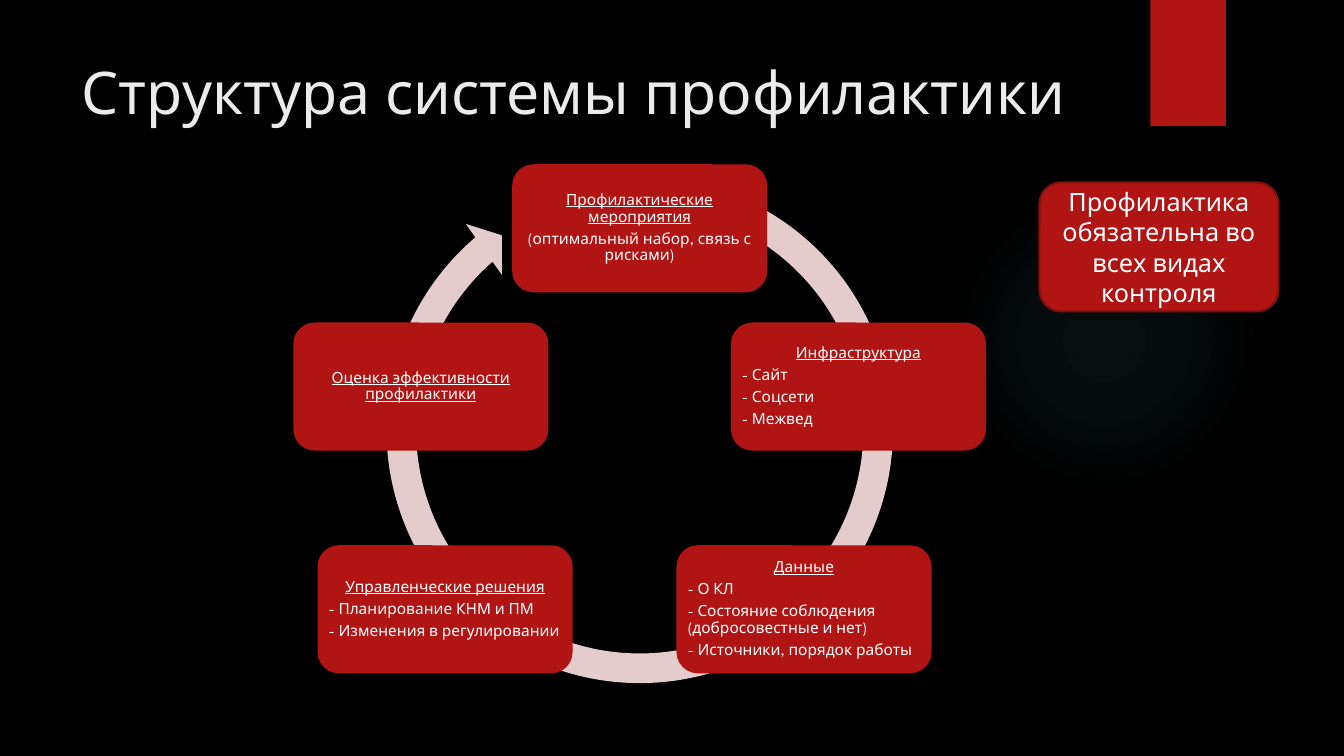
from lxml import etree
from pptx import Presentation
from pptx.dml.color import RGBColor
from pptx.enum.shapes import MSO_SHAPE as SHAPE
from pptx.enum.text import MSO_ANCHOR as ANCHOR, MSO_AUTO_SIZE as AUTOSIZE, PP_ALIGN as ALIGN
from pptx.oxml import parse_xml
from pptx.util import Inches, Pt

FONT = "League Spartan"
RED, DARK_RED, PINK = "B01513", "82100E", "E4CCCC"
BLACK, WHITE, TITLE_COLOR, GLOW = "000000", "FFFFFF", "EBEBEB", "50B9C1"
GLOW_STOPS = [(0, 7), (36, 6), (69, 0)]  # position %, opacity %

TITLE = "Структура системы профилактики"
NOTE = "Профилактика обязательна во всех видах контроля"

BOX_W, BOX_H = 2.53, 1.27
# left, top, heading, centred detail, list items
STAGES = [
    (5.08, 1.63, "Профилактические мероприятия",
     "(оптимальный набор, связь с рисками)", []),
    (7.25, 3.2, "Инфраструктура", None, ["Сайт", "Соцсети", "Межвед"]),
    (6.71, 5.41, "Данные", None,
     ["О КЛ", "Состояние соблюдения (добросовестные и нет)",
      "Источники, порядок работы"]),
    (3.15, 5.41, "Управленческие решения", None,
     ["Планирование КНМ и ПМ", "Изменения в регулировании"]),
    (2.91, 3.2, "Оценка эффективности профилактики", None, []),
]
ARROW_ADJUSTMENTS = [0.055, 3.307, 137.518, 174.007, 0.058]
A_NS = "http://schemas.openxmlformats.org/drawingml/2006/main"


def rgb(value):
    return RGBColor.from_string(value)


def add_block(slide, kind, left, top, width, height, fill=RED, line=None):
    sp = slide.shapes.add_shape(
        kind, Inches(left), Inches(top), Inches(width), Inches(height))
    sp.shadow.inherit = False
    sp.fill.solid()
    sp.fill.fore_color.rgb = rgb(fill)
    if line:
        sp.line.color.rgb = rgb(line)
        sp.line.width = Pt(1.5)
    else:
        sp.line.fill.background()
    return sp


def write(tf, text, size=11, color=WHITE, align=ALIGN.CENTER,
          underline=False, spacing=None, after=None):
    """Fill the empty first paragraph, or append a new one."""
    p = tf.paragraphs[0] if not tf.text else tf.add_paragraph()
    p.alignment = align
    if spacing:
        p.line_spacing = spacing
    if after:
        p.space_after = Pt(after)
    r = p.add_run()
    r.text = text
    r.font.name = FONT
    r.font.size = Pt(size)
    r.font.color.rgb = rgb(color)
    r.font.underline = underline


def set_glow(sp):
    """Replace the solid fill with a fading circular gradient."""
    stops = "".join(
        f'<a:gs pos="{pos * 1000}"><a:srgbClr val="{GLOW}">'
        f'<a:alpha val="{alpha * 1000}"/></a:srgbClr></a:gs>'
        for pos, alpha in GLOW_STOPS)
    grad = parse_xml(
        f'<a:gradFill xmlns:a="{A_NS}"><a:gsLst>{stops}</a:gsLst>'
        '<a:path path="circle"><a:fillToRect l="50000" t="50000" '
        'r="50000" b="50000"/></a:path></a:gradFill>')
    solid = sp._element.spPr.find(etree.QName(A_NS, "solidFill").text)
    solid.getparent().replace(solid, grad)


def add_stage(slide, left, top, heading, detail, items):
    sp = add_block(slide, SHAPE.ROUNDED_RECTANGLE, left, top, BOX_W, BOX_H)
    tf = sp.text_frame
    tf.word_wrap = True
    tf.vertical_anchor = ANCHOR.MIDDLE
    tf.margin_left = tf.margin_right = Inches(0.05)
    tf.margin_top = tf.margin_bottom = Inches(0.05)
    para = dict(spacing=0.9, after=3.85)
    write(tf, heading, underline=True, **para)
    if detail:
        write(tf, detail, **para)
    for item in items:
        write(tf, f"- {item}", align=ALIGN.LEFT, **para)


def main():
    prs = Presentation()
    prs.slide_width, prs.slide_height = Inches(13.33), Inches(7.5)
    slide = prs.slides.add_slide(prs.slide_layouts[5])
    slide.background.fill.solid()
    slide.background.fill.fore_color.rgb = rgb(BLACK)

    set_glow(add_block(slide, SHAPE.OVAL, 9.41, 1.83, 3.08, 3.08))
    add_block(slide, SHAPE.RECTANGLE, 11.41, 0, 0.75, 1.25)

    title = slide.shapes.title
    title.left, title.top = Inches(0.71), Inches(0.5)
    title.width, title.height = Inches(10.77), Inches(1.53)
    tf = title.text_frame
    tf.auto_size = AUTOSIZE.NONE
    tf.vertical_anchor = ANCHOR.TOP
    write(tf, TITLE, size=42, color=TITLE_COLOR, align=ALIGN.LEFT)

    arrow = add_block(slide, SHAPE.CIRCULAR_ARROW, 3.67, 1.59, 5.35, 5.35, PINK)
    for i, value in enumerate(ARROW_ADJUSTMENTS):
        arrow.adjustments[i] = value
    for stage in STAGES:
        add_stage(slide, *stage)

    note = add_block(slide, SHAPE.ROUNDED_RECTANGLE, 10.31, 1.81, 2.37, 1.28,
                     line=DARK_RED)
    note.text_frame.word_wrap = True
    note.text_frame.vertical_anchor = ANCHOR.MIDDLE
    write(note.text_frame, NOTE, size=18)

    prs.save("out.pptx")


if __name__ == "__main__":
    main()
